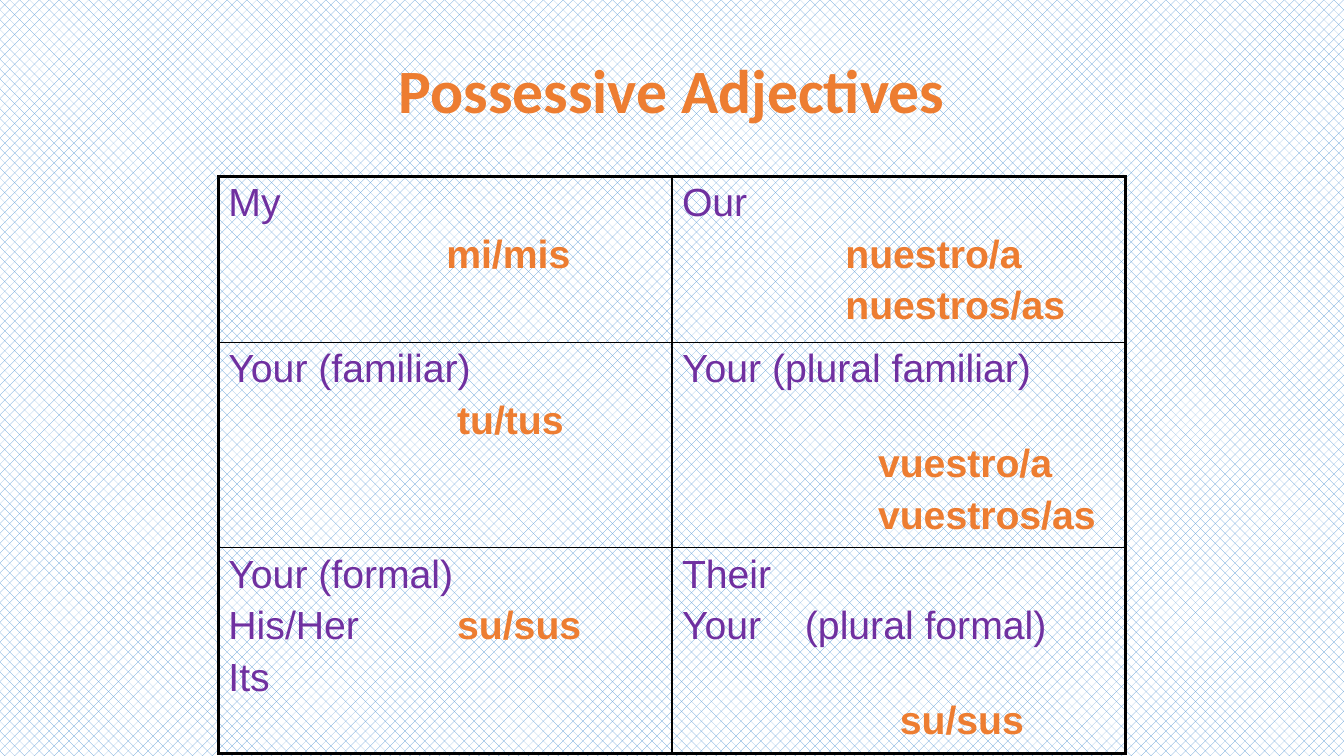
import pptx
import pptx.util
import pptx.dml.color
import pptx.enum.dml
import pptx.enum.text
import pptx.oxml
import pptx.oxml.ns

Pt = pptx.util.Pt
COLORS = {
    "pattern": "5B9BD5",
    "paper": "FFFFFF",
    "spanish": "ED7D31",
    "english": "7030A0",
    "border": "000000",
}
THICK, THIN = 2.25, 1
STEP, GAP = 5.6, 36.7
ROWS = [118.5, 143.3, 143.3]
WIDTH = 324

CELLS = [
    [
        [("english", "My", 0, STEP), ("spanish", "mi/mis", 155.6, STEP)],
        [
            ("english", "Our", 0, STEP),
            ("spanish", "nuestro/a", 116.7, STEP),
            ("spanish", "nuestros/as", 116.7, STEP),
        ],
    ],
    [
        [("english", "Your (familiar)", 0, STEP), ("spanish", "tu/tus", 163.4, STEP)],
        [
            ("english", "Your (plural familiar)", 0, STEP),
            ("spanish", "vuestro/a", 140, GAP),
            ("spanish", "vuestros/as", 140, STEP),
        ],
    ],
    [
        [
            ("english", "Your (formal)", 0, STEP),
            ("english", "His/Her\t", 163.4, STEP, "su/sus"),
            ("english", "Its", 0, STEP),
        ],
        [
            ("english", "Their", 0, STEP),
            ("english", "Your\t(plural formal)", 87.8, STEP),
            ("spanish", "su/sus", 155.6, GAP),
        ],
    ],
]


def color(name):
    return pptx.dml.color.RGBColor.from_string(COLORS[name])


def style(font, tone, size, face):
    font.name = face
    font.size = Pt(size)
    font.bold = tone == "spanish"
    font.color.rgb = color(tone)


def paint(slide):
    fill = slide.background.fill
    fill.patterned()
    fill.pattern = pptx.enum.dml.MSO_PATTERN.PERCENT_30
    fill.fore_color.rgb = color("pattern")
    fill.back_color.rgb = color("paper")


def add_title(slide, text):
    box = slide.shapes.add_textbox(Pt(48), Pt(21.6), Pt(864), Pt(90))
    frame = box.text_frame
    frame.word_wrap = True
    frame.vertical_anchor = pptx.enum.text.MSO_ANCHOR.MIDDLE
    para = frame.paragraphs[0]
    para.text = text
    para.alignment = pptx.enum.text.PP_ALIGN.CENTER
    para.line_spacing = 0.9
    style(para.font, "spanish", 44, "Calibri")


def add_border(cell, side, width):
    space = pptx.oxml.ns.nsdecls("a")
    line = pptx.oxml.parse_xml(
        f'<a:{side} {space} w="{Pt(width)}"><a:solidFill>'
        f'<a:srgbClr val="{COLORS["border"]}"/></a:solidFill></a:{side}>'
    )
    cell._tc.get_or_add_tcPr().append(line)


def add_indent(para, text, indent):
    props = para._p.get_or_add_pPr()
    if "\t" in text:
        space = pptx.oxml.ns.nsdecls("a")
        props.append(pptx.oxml.parse_xml(
            f'<a:tabLst {space}><a:tab pos="{Pt(indent)}" algn="l"/></a:tabLst>'
        ))
    elif indent:
        props.set("marL", str(Pt(indent)))
        props.set("indent", "0")


def fill_cell(cell, lines):
    cell.margin_bottom = Pt(0)
    frame = cell.text_frame
    for index, (tone, text, indent, before, *answer) in enumerate(lines):
        para = frame.add_paragraph() if index else frame.paragraphs[0]
        para.space_before = Pt(before if index else 0)
        add_indent(para, text, indent)
        style(para.font, tone, 28, "Arial")
        para.add_run().text = text
        for word in answer:
            run = para.add_run()
            run.text = word
            run.font.bold = True
            run.font.color.rgb = color("spanish")


def add_grid(slide):
    shape = slide.shapes.add_table(
        len(ROWS), 2, Pt(156), Pt(126), Pt(2 * WIDTH), Pt(sum(ROWS))
    )
    table = shape.table
    table.first_row = False
    table.horz_banding = False
    for column in table.columns:
        column.width = Pt(WIDTH)
    last = len(ROWS) - 1
    for row, height in enumerate(ROWS):
        table.rows[row].height = Pt(height)
        for col, lines in enumerate(CELLS[row]):
            cell = table.cell(row, col)
            edges = {"lnL": col == 0, "lnR": col == 1, "lnT": row == 0, "lnB": row == last}
            for side, outer in edges.items():
                add_border(cell, side, THICK if outer else THIN)
            cell.fill.background()
            fill_cell(cell, lines)


def main():
    deck = pptx.Presentation()
    deck.slide_width, deck.slide_height = Pt(960), Pt(540)
    slide = deck.slides.add_slide(deck.slide_layouts[6])
    paint(slide)
    add_title(slide, "Possessive Adjectives")
    add_grid(slide)
    deck.save("out.pptx")


if __name__ == "__main__":
    main()
